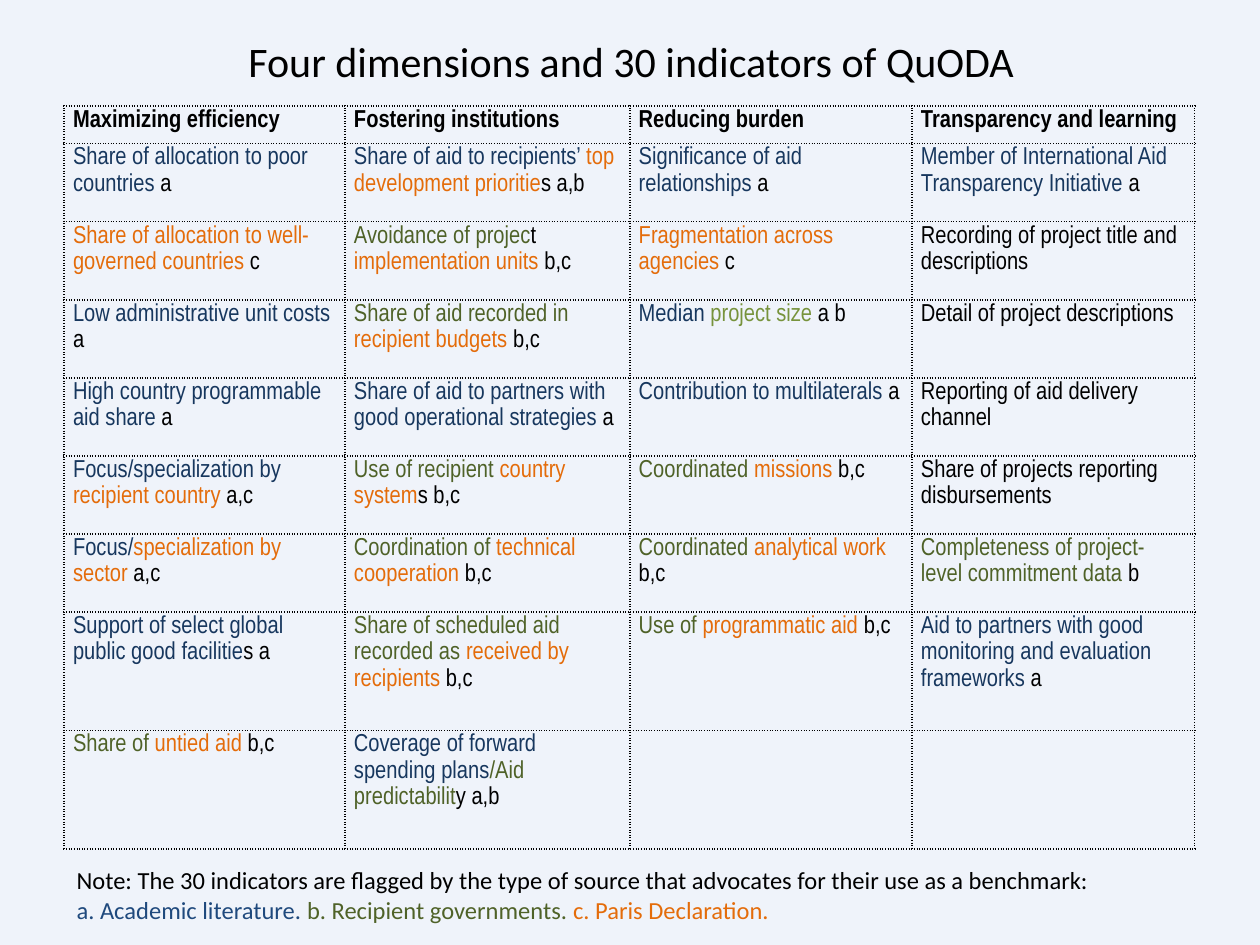
from lxml.etree import SubElement
from pptx import Presentation
from pptx.dml.color import RGBColor
from pptx.enum.text import MSO_ANCHOR, PP_ALIGN
from pptx.oxml.ns import qn
from pptx.util import Inches, Pt

COLORS = {
    "page": "EFF3FA", "black": "000000", "academic": "17375E", "recipient": "4F6228",
    "paris": "E46C0A", "light": "77933C", "note": "1F497D",
}
K, A, R, P = "black", "academic", "recipient", "paris"

TITLE = "Four dimensions and 30 indicators of QuODA"
HEADERS = ["Maximizing efficiency", "Fostering institutions", "Reducing burden",
           "Transparency and learning"]
# One list per dimension; each indicator is a list of (text, color) spans.
EFFICIENCY = [
    [("Share of allocation to poor countries ", A), ("a", K)],
    [("Share of allocation to well-governed countries", P), (" c", K)],
    [("Low administrative unit costs", A), (" a", K)],
    [("High country programmable aid share", A), (" a", K)],
    [("Focus/specialization by ", A), ("recipient country ", P), ("a,c", K)],
    [("Focus/", A), ("specialization by sector ", P), ("a,c", K)],
    [("Support of select global public good facilitie", A), ("s a", K)],
    [("Share of", R), (" untied aid ", P), ("b,c", K)],
]
INSTITUTIONS = [
    [("Share of aid to recipients’ ", A), ("top development prioritie", P), ("s a,b", K)],
    [("Avoidance of projec", R), ("t ", K), ("implementation units ", P), ("b,c", K)],
    [("Share of aid recorded in ", R), ("recipient budgets ", P), ("b,c", K)],
    [("Share of aid to partners with good operational strategies", A), (" a", K)],
    [("Use of recipient ", R), ("country system", P), ("s b,c", K)],
    [("Coordination of", R), (" technical cooperation ", P), ("b,c", K)],
    [("Share of scheduled aid recorded as ", R), ("received by recipients ", P), ("b,c", K)],
    [("Coverage of forward spending plans", A), ("/Aid predictabilit", R), ("y a,b", K)],
]
BURDEN = [
    [("Significance of aid relationships", A), (" a", K)],
    [("Fragmentation across agencies", P), (" c", K)],
    [("Median ", A), ("project size", "light"), (" a b", K)],
    [("Contribution to multilaterals", A), (" a", K)],
    [("Coordinated", R), (" missions ", P), ("b,c", K)],
    [("Coordinated", R), (" analytical work ", P), ("b,c", K)],
    [("Use of", R), (" programmatic aid ", P), ("b,c", K)],
]
TRANSPARENCY = [
    [("Member of International Aid Transparency Initiative", A), (" a", K)],
    [("Recording of project title and descriptions", K)],
    [("Detail of project descriptions", K)],
    [("Reporting of aid delivery channel", K)],
    [("Share of projects reporting disbursements", K)],
    [("Completeness of project-level commitment data", R), (" b", K)],
    [("Aid to partners with good monitoring and evaluation frameworks", A), (" a", K)],
]
DIMENSIONS = [EFFICIENCY, INSTITUTIONS, BURDEN, TRANSPARENCY]
NOTE = [
    [("Note: The 30 indicators are flagged by the type of source that advocates "
      "for their use as a benchmark:", K)],
    [("a. Academic literature. ", "note"), ("b. Recipient governments.", R),
     (" c. Paris Declaration.", P)],
]

LEFT = 0.51
COLUMN_WIDTHS = [2.23, 2.26, 2.24, 2.24]
ROW_HEIGHTS = [0.3] + [0.62] * 6 + [0.94] * 2
TITLE_FORMAT = {"name": "Calibri", "size": Pt(24)}
NOTE_FORMAT = {"name": "Calibri", "size": Pt(14)}
CELL_FORMAT = {"name": "Arial Narrow", "size": Pt(14), "bold": False}
HEADER_FORMAT = {**CELL_FORMAT, "bold": True}
CELL_LAYOUT = {"margin_left": Inches(0.07), "margin_right": Inches(0.07),
               "margin_top": 0, "margin_bottom": 0}


def color(name):
    return RGBColor.from_string(COLORS[name])


def write(para, spans, font_format):
    for text, color_name in spans:
        span = para.add_run()
        span.text = text
        for key, value in font_format.items():
            setattr(span.font, key, value)
        span.font.color.rgb = color(color_name)


def add_box(page, area, paragraphs, font_format, align, anchor):
    box = page.shapes.add_textbox(*map(Inches, area))
    frame = box.text_frame
    frame.word_wrap = True
    frame.vertical_anchor = anchor
    for index, spans in enumerate(paragraphs):
        para = frame.add_paragraph() if index else frame.paragraphs[0]
        para.alignment = align
        write(para, spans, font_format)


def add_dotted_borders(cell):
    properties = cell._tc.get_or_add_tcPr()
    for position, side in enumerate(("a:lnL", "a:lnR", "a:lnT", "a:lnB")):
        line = SubElement(properties, qn(side), w=str(Pt(1)))
        fill = SubElement(line, qn("a:solidFill"))
        SubElement(fill, qn("a:srgbClr"), val=COLORS["black"])
        SubElement(line, qn("a:prstDash"), val="sysDot")
        properties.insert(position, line)


def add_indicator_table(page):
    shape = page.shapes.add_table(
        len(ROW_HEIGHTS), len(COLUMN_WIDTHS), Inches(LEFT), Inches(0.84),
        Inches(sum(COLUMN_WIDTHS)), Inches(sum(ROW_HEIGHTS)))
    table = shape.table
    table.first_row = table.horz_banding = False
    for column, width in zip(table.columns, COLUMN_WIDTHS):
        column.width = Inches(width)
    for row, height in zip(table.rows, ROW_HEIGHTS):
        row.height = Inches(height)
    for cell in table.iter_cells():
        for key, value in CELL_LAYOUT.items():
            setattr(cell, key, value)
        cell.fill.background()
        add_dotted_borders(cell)
    for column, (header, indicators) in enumerate(zip(HEADERS, DIMENSIONS)):
        for row, spans in enumerate([[(header, K)]] + indicators):
            para = table.cell(row, column).text_frame.paragraphs[0]
            para.line_spacing = 1.15
            write(para, spans, CELL_FORMAT if row else HEADER_FORMAT)


def main():
    deck = Presentation()
    deck.slide_width, deck.slide_height = Inches(10), Inches(7.5)
    page = deck.slides.add_slide(deck.slide_layouts[6])
    page.background.fill.solid()
    page.background.fill.fore_color.rgb = color("page")
    add_box(page, (LEFT, 0.13, 9, 0.71), [[(TITLE, K)]], TITLE_FORMAT,
            PP_ALIGN.CENTER, MSO_ANCHOR.MIDDLE)
    add_indicator_table(page)
    add_box(page, (LEFT, 6.82, 9.06, 0.57), NOTE, NOTE_FORMAT,
            PP_ALIGN.LEFT, MSO_ANCHOR.TOP)
    deck.save("out.pptx")


if __name__ == "__main__":
    main()
